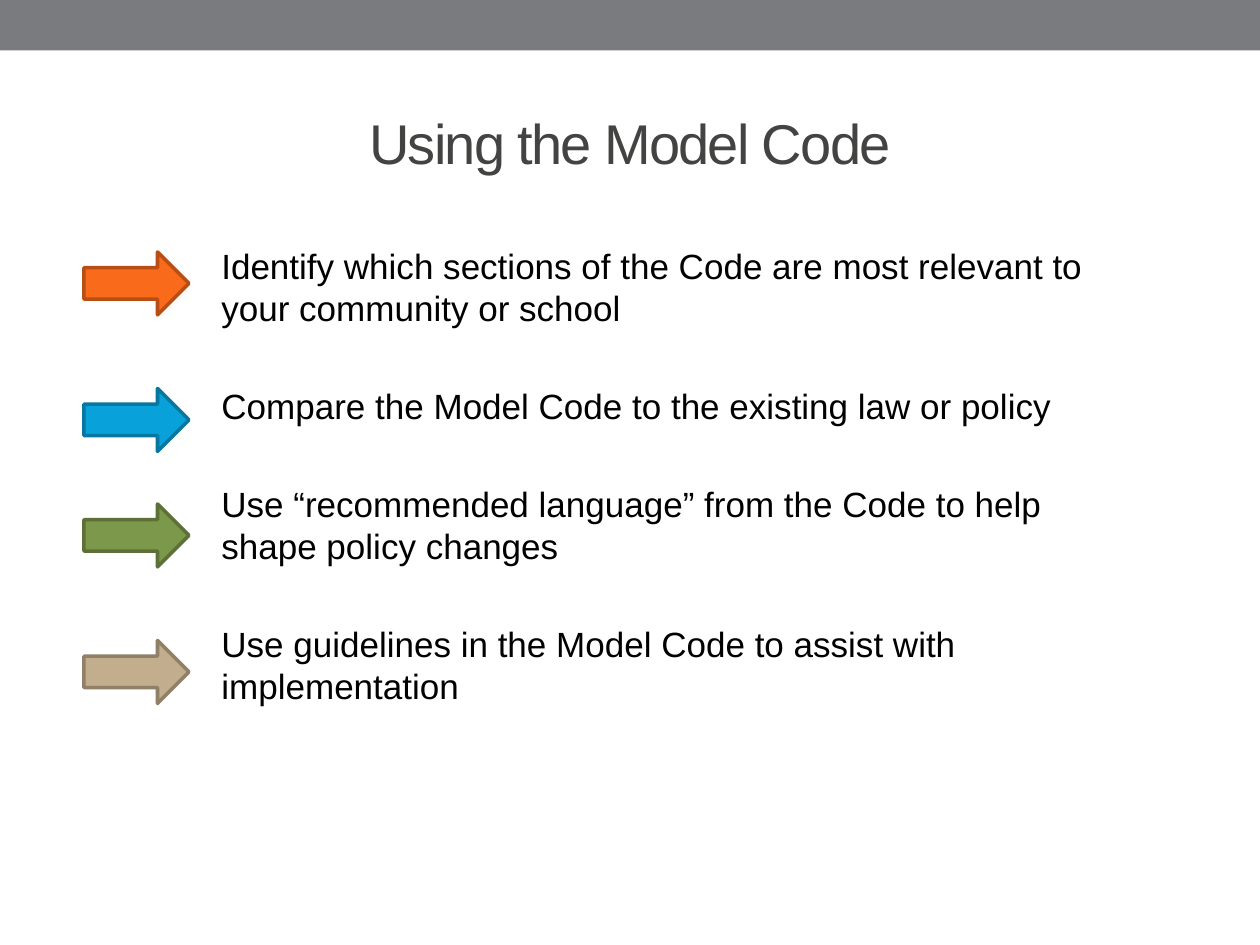
from pptx import Presentation
from pptx.dml.color import RGBColor
from pptx.enum.shapes import MSO_SHAPE as Shape
from pptx.enum.text import MSO_ANCHOR as Anchor, PP_ALIGN as Align
from pptx.util import Pt

WHITE = RGBColor(0xFF, 0xFF, 0xFF)
BLACK = RGBColor(0x00, 0x00, 0x00)
BAR_GRAY = RGBColor(0x79, 0x7B, 0x7E)
TITLE_GRAY = RGBColor(0x43, 0x43, 0x42)
ORANGE, DARK_ORANGE = RGBColor(0xF9, 0x6A, 0x1B), RGBColor(0xB8, 0x4E, 0x14)
BLUE, DARK_BLUE = RGBColor(0x08, 0xA1, 0xD9), RGBColor(0x06, 0x77, 0xA1)
GREEN, DARK_GREEN = RGBColor(0x7C, 0x98, 0x4A), RGBColor(0x5C, 0x70, 0x37)
TAN, DARK_TAN = RGBColor(0xC2, 0xAD, 0x8D), RGBColor(0x90, 0x80, 0x68)


def write(para, text, size=20, color=BLACK, align=Align.LEFT, spacing=0):
    para.alignment = align
    span = para.add_run()
    span.text = text
    span.font.name = "Arial"
    span.font.size = Pt(size)
    span.font.color.rgb = color
    if spacing:
        span.font._element.set("spc", str(spacing * 100))


def add_filled(kind, left, top, width, height, fill):
    shape = slide.shapes.add_shape(kind, Pt(left), Pt(top), Pt(width), Pt(height))
    shape.shadow.inherit = False
    shape.fill.solid()
    shape.fill.fore_color.rgb = fill
    return shape


deck = Presentation()
deck.slide_width, deck.slide_height = Pt(720), Pt(540)
slide = deck.slides.add_slide(deck.slide_layouts[5])
slide.background.fill.solid()
slide.background.fill.fore_color.rgb = WHITE

bar = add_filled(Shape.RECTANGLE, 0, 0, 720, 28.8, BAR_GRAY)
bar.line.fill.background()

title = slide.shapes.title
title.left, title.top, title.width, title.height = Pt(36), Pt(42), Pt(648), Pt(78)
title.text_frame.vertical_anchor = Anchor.MIDDLE
write(title.text_frame.paragraphs[0], "Using the Model Code",
      size=32, color=TITLE_GRAY, align=Align.CENTER, spacing=-1)

steps = [
    ("Identify which sections of the Code are most relevant to your community or school",
     144, ORANGE, DARK_ORANGE),
    ("Compare the Model Code to the existing law or policy", 222, BLUE, DARK_BLUE),
    ("Use “recommended language” from the Code to help shape policy changes",
     288, GREEN, DARK_GREEN),
    ("Use guidelines in the Model Code to assist with implementation", 366, TAN, DARK_TAN),
]

box = slide.shapes.add_textbox(Pt(48), Pt(120), Pt(588), Pt(408))
frame = box.text_frame
frame.word_wrap = True
frame.margin_left = Pt(78.5)
frame.margin_top = Pt(19.7)

for index, (text, top, fill, outline) in enumerate(steps):
    para = frame.add_paragraph() if index else frame.paragraphs[0]
    para.line_spacing = Pt(24)
    para.space_before = Pt(32 if index else 0)
    write(para, text)
    arrow = add_filled(Shape.RIGHT_ARROW, 48, top, 60, 36, fill)
    arrow.line.color.rgb = outline
    arrow.line.width = Pt(2)

deck.save("out.pptx")
